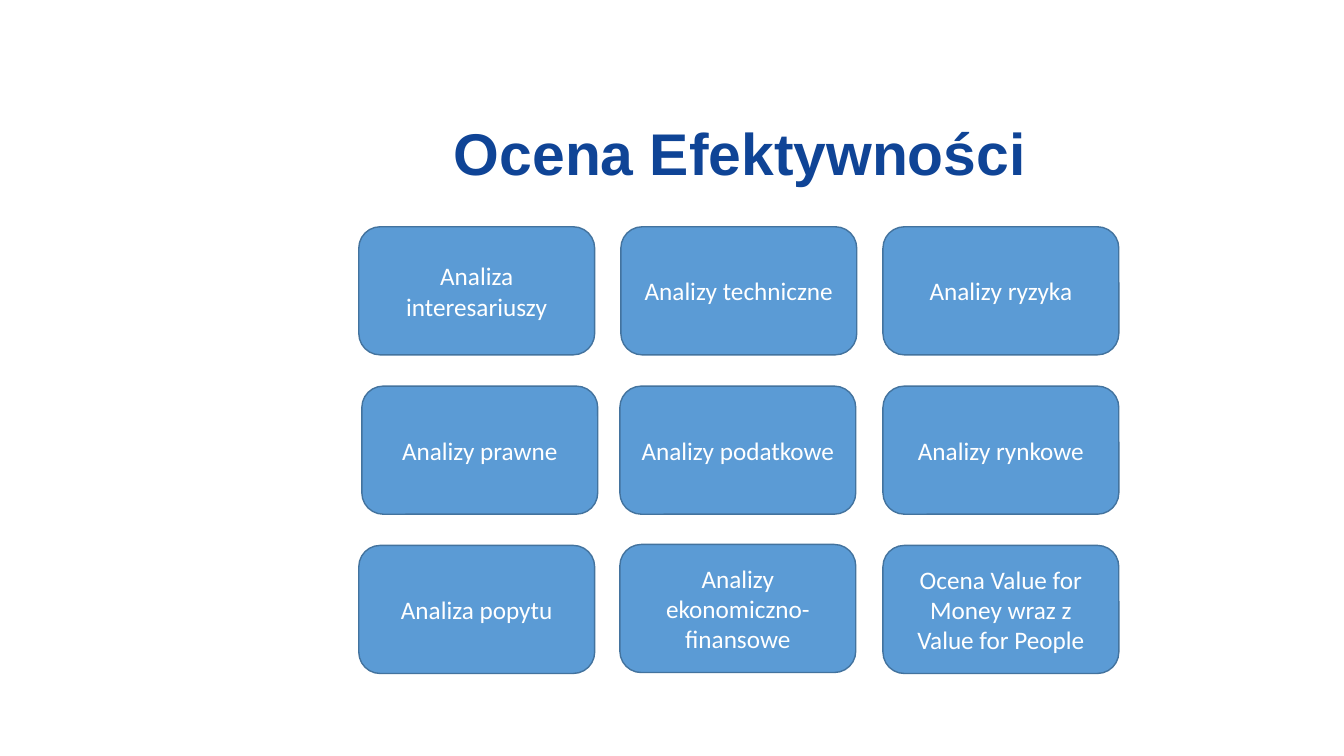
from dataclasses import dataclass

from pptx import Presentation
from pptx.dml.color import RGBColor
from pptx.enum.shapes import MSO_SHAPE
from pptx.enum.text import MSO_ANCHOR, MSO_AUTO_SIZE, PP_ALIGN
from pptx.slide import Slide
from pptx.text.text import TextFrame
from pptx.util import Pt

# Grid of analyses, in points
GRID_LEFT, GRID_TOP = 256.3, 162
COLUMN_STEP, ROW_STEP = 187.2, 113.8
CARD_WIDTH, CARD_HEIGHT = 168.5, 91.5

TITLE_FONT = {"name": "Arial", "size": Pt(42), "bold": True}
CARD_FONT = {"name": "Calibri", "size": Pt(18), "bold": False}


@dataclass(frozen=True)
class Analysis:
    label: str
    column: int
    row: int
    shift_x: float = 0
    shift_y: float = 0


ANALYSES = [
    Analysis("Analiza interesariuszy", 0, 0),
    Analysis("Analiza popytu", 0, 2),
    Analysis("Analizy techniczne", 1, 0),
    Analysis("Analizy podatkowe", 1, 1, shift_x=-0.7),
    Analysis("Analizy ekonomiczno-finansowe", 1, 2, shift_x=-0.7, shift_y=-0.7),
    Analysis("Analizy ryzyka", 2, 0),
    Analysis("Analizy rynkowe", 2, 1),
    Analysis("Ocena Value for Money wraz z Value for People", 2, 2),
    Analysis("Analizy prawne", 0, 1, shift_x=2.2),
]


def color(hex_value: str) -> RGBColor:
    return RGBColor.from_string(hex_value)


def write_centred(frame: TextFrame, text: str, font_format: dict, hex_value: str) -> None:
    frame.word_wrap = True
    frame.auto_size = MSO_AUTO_SIZE.NONE
    frame.vertical_anchor = MSO_ANCHOR.MIDDLE
    frame.text = text
    paragraph = frame.paragraphs[0]
    paragraph.alignment = PP_ALIGN.CENTER
    for attribute, value in font_format.items():
        setattr(paragraph.font, attribute, value)
    paragraph.font.color.rgb = color(hex_value)


def add_heading(slide: Slide) -> None:
    heading = slide.shapes.title
    heading.left, heading.top = Pt(258.5), Pt(90.7)
    heading.width, heading.height = Pt(540), Pt(42.5)
    write_centred(heading.text_frame, "Ocena Efektywności", TITLE_FONT, "0F4496")
    heading.text_frame.paragraphs[0].line_spacing = 0.9


def add_card(slide: Slide, analysis: Analysis) -> None:
    left = GRID_LEFT + analysis.column * COLUMN_STEP + analysis.shift_x
    top = GRID_TOP + analysis.row * ROW_STEP + analysis.shift_y
    card = slide.shapes.add_shape(
        MSO_SHAPE.ROUNDED_RECTANGLE, Pt(left), Pt(top), Pt(CARD_WIDTH), Pt(CARD_HEIGHT)
    )
    card.shadow.inherit = False
    card.fill.solid()
    card.fill.fore_color.rgb = color("5B9BD5")
    card.line.color.rgb = color("43739E")
    card.line.width = Pt(1)
    write_centred(card.text_frame, analysis.label, CARD_FONT, "FFFFFF")


def main() -> None:
    presentation = Presentation()
    presentation.slide_width, presentation.slide_height = Pt(960), Pt(540)

    # Title Only layout
    slide = presentation.slides.add_slide(presentation.slide_layouts[5])
    add_heading(slide)

    # Analysis cards
    for analysis in ANALYSES:
        add_card(slide, analysis)

    presentation.save("out.pptx")


if __name__ == "__main__":
    main()
